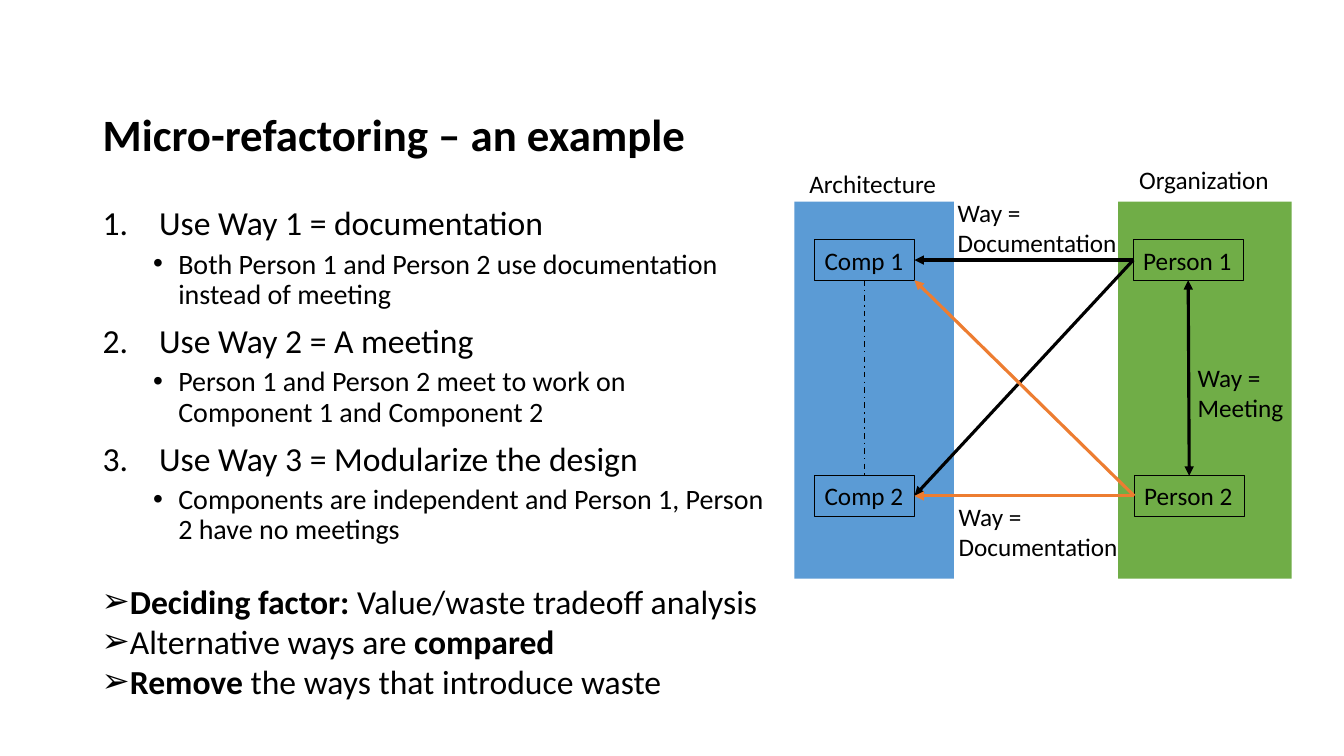
import pptx
import pptx.util
import pptx.dml.color
import pptx.enum.dml
import pptx.enum.shapes
import pptx.enum.text
import pptx.oxml.ns
import lxml.etree

Inches = pptx.util.Inches
Pt = pptx.util.Pt
FONT = "Calibri"
BLACK, BLUE, GREEN, ORANGE = "000000", "5B9BD5", "70AD47", "ED7D31"
TOP, LEFT, BOTTOM, RIGHT = 0, 1, 2, 3

WAYS = [
    ("Use Way 1 = documentation",
     "Both Person 1 and Person 2 use documentation instead of meeting"),
    ("Use Way 2 = A meeting",
     "Person 1 and Person 2 meet to work on Component 1 and Component 2"),
    ("Use Way 3 = Modularize the design",
     "Components are independent and Person 1, Person 2 have no meetings"),
]
# Each conclusion is a list of (text, bold) runs
CONCLUSIONS = [
    [("Deciding factor: ", True), ("Value/waste tradeoff analysis", False)],
    [("Alternative ways are ", False), ("compared", True)],
    [("Remove ", True), ("the ways that introduce waste", False)],
]


def color(hex_code):
    return pptx.dml.color.RGBColor.from_string(hex_code)


def add_child(parent, tag, **attributes):
    child = lxml.etree.SubElement(parent, pptx.oxml.ns.qn(tag))
    for name, value in attributes.items():
        child.set(name, value)
    return child


def add_frame(slide, left, top, width, height, wrap=True):
    box = slide.shapes.add_textbox(
        Inches(left), Inches(top), Inches(width), Inches(height))
    box.text_frame.word_wrap = wrap
    return box


def add_run(paragraph, text, size, bold=False):
    run = paragraph.add_run()
    run.text = text
    run.font.name = FONT
    run.font.size = Pt(size)
    run.font.bold = bold
    run.font.color.rgb = color(BLACK)


def next_paragraph(frame):
    first = frame.paragraphs[0]
    return frame.add_paragraph() if first.runs else first


def set_bullet(paragraph, char=None, margin=0, hanging=0):
    """Gives a paragraph the bullet char, or a number if there is none."""
    properties = paragraph._p.get_or_add_pPr()
    properties.set("marL", str(Inches(margin)))
    properties.set("indent", str(-Inches(hanging)))
    add_child(properties, "a:buFont", typeface="Arial" if char else "+mj-lt")
    if char:
        add_child(properties, "a:buChar", char=char)
    else:
        add_child(properties, "a:buAutoNum", type="arabicPeriod")


def add_title(slide, text):
    frame = add_frame(slide, 0.92, 1.08, 11.5, 0.55).text_frame
    frame.vertical_anchor = pptx.enum.text.MSO_ANCHOR.MIDDLE
    frame.paragraphs[0].line_spacing = 0.9
    add_run(frame.paragraphs[0], text, 32, True)


def add_ways(slide):
    frame = add_frame(slide, 0.92, 2, 6.76, 5.12).text_frame
    for index, (way, detail) in enumerate(WAYS):
        heading = next_paragraph(frame)
        set_bullet(heading, None, 0.56, 0.56)
        heading.line_spacing = 0.9
        if index:
            heading.space_before = Pt(10)
        add_run(heading, way, 24)

        explanation = next_paragraph(frame)
        explanation.level = 1
        set_bullet(explanation, "•", 0.75, 0.25)
        explanation.line_spacing = 0.9
        explanation.space_before = Pt(5)
        add_run(explanation, detail, 20)


def add_conclusions(slide):
    frame = add_frame(slide, 0.91, 5.71, 6.92, 1.31).text_frame
    for parts in CONCLUSIONS:
        conclusion = next_paragraph(frame)
        set_bullet(conclusion, "➢")
        for text, bold in parts:
            add_run(conclusion, text, 24, bold)


def add_panel(slide, left, width, fill):
    panel = slide.shapes.add_shape(
        pptx.enum.shapes.MSO_SHAPE.RECTANGLE,
        Inches(left), Inches(2), Inches(width), Inches(3.74))
    panel.shadow.inherit = False
    panel.fill.solid()
    panel.fill.fore_color.rgb = color(fill)
    panel.line.fill.background()


def add_label(slide, lines, left, top, width, height=0.4):
    label = add_frame(slide, left, top, width, height, wrap=False)
    for line in lines:
        add_run(next_paragraph(label.text_frame), line, 18)
    return label


def add_node(slide, name, left, top, width):
    node = add_label(slide, [name], left, top, width)
    node.line.color.rgb = color(BLACK)
    node.line.width = Pt(0.75)
    return node


def add_link(slide, start, start_side, end, end_side, hex_code=BLACK,
             width=2.25, heads=("a:tailEnd",)):
    """Links two nodes; without an end side it stops at the lower right corner."""
    link = slide.shapes.add_connector(
        pptx.enum.shapes.MSO_CONNECTOR.STRAIGHT, 0, 0,
        end.left + end.width, end.top + end.height)
    link.begin_connect(start, start_side)
    if end_side is not None:
        link.end_connect(end, end_side)
    link.line.color.rgb = color(hex_code)
    link.line.width = Pt(width)
    for head in heads:
        add_child(link.line._get_or_add_ln(), head, type="triangle")
    add_child(link._element.spPr, "a:effectLst")
    return link


def add_diagram(slide):
    # Panels and their headings
    add_panel(slide, 7.88, 1.58, BLUE)
    add_panel(slide, 11.09, 1.72, GREEN)
    add_label(slide, ["Architecture"], 7.93, 1.62, 1.47)
    add_label(slide, ["Organization"], 11.2, 1.58, 1.5)

    # Nodes
    person_1 = add_node(slide, "Person 1", 11.24, 2.38, 1.09)
    person_2 = add_node(slide, "Person 2", 11.25, 4.72, 1.09)
    comp_1 = add_node(slide, "Comp 1", 8.08, 2.38, 0.99)
    comp_2 = add_node(slide, "Comp 2", 8.08, 4.72, 0.99)

    # Links
    add_link(slide, person_1, LEFT, comp_1, RIGHT)
    add_link(slide, person_1, LEFT, comp_2, RIGHT)
    add_link(slide, person_2, LEFT, comp_1, None, ORANGE)
    add_link(slide, person_2, LEFT, comp_2, RIGHT, ORANGE)
    add_link(slide, person_1, BOTTOM, person_2, TOP,
             heads=("a:headEnd", "a:tailEnd"))
    dependency = add_link(slide, comp_1, BOTTOM, comp_2, TOP, width=1, heads=())
    dependency.line.dash_style = pptx.enum.dml.MSO_LINE.DASH_DOT

    # Ways of communicating
    add_label(slide, ["Way =", "Documentation"], 9.4, 1.91, 1.8, 0.71)
    add_label(slide, ["Way =", "Meeting"], 11.78, 3.54, 1.06, 0.71)
    add_label(slide, ["Way =", "Documentation"], 9.41, 4.92, 1.8, 0.71)


def main():
    presentation = pptx.Presentation()
    presentation.slide_width = Inches(13.33)
    presentation.slide_height = Inches(7.5)
    slide = presentation.slides.add_slide(presentation.slide_layouts[6])
    add_title(slide, "Micro-refactoring – an example")
    add_ways(slide)
    add_diagram(slide)
    add_conclusions(slide)
    presentation.save("out.pptx")


if __name__ == "__main__":
    main()
